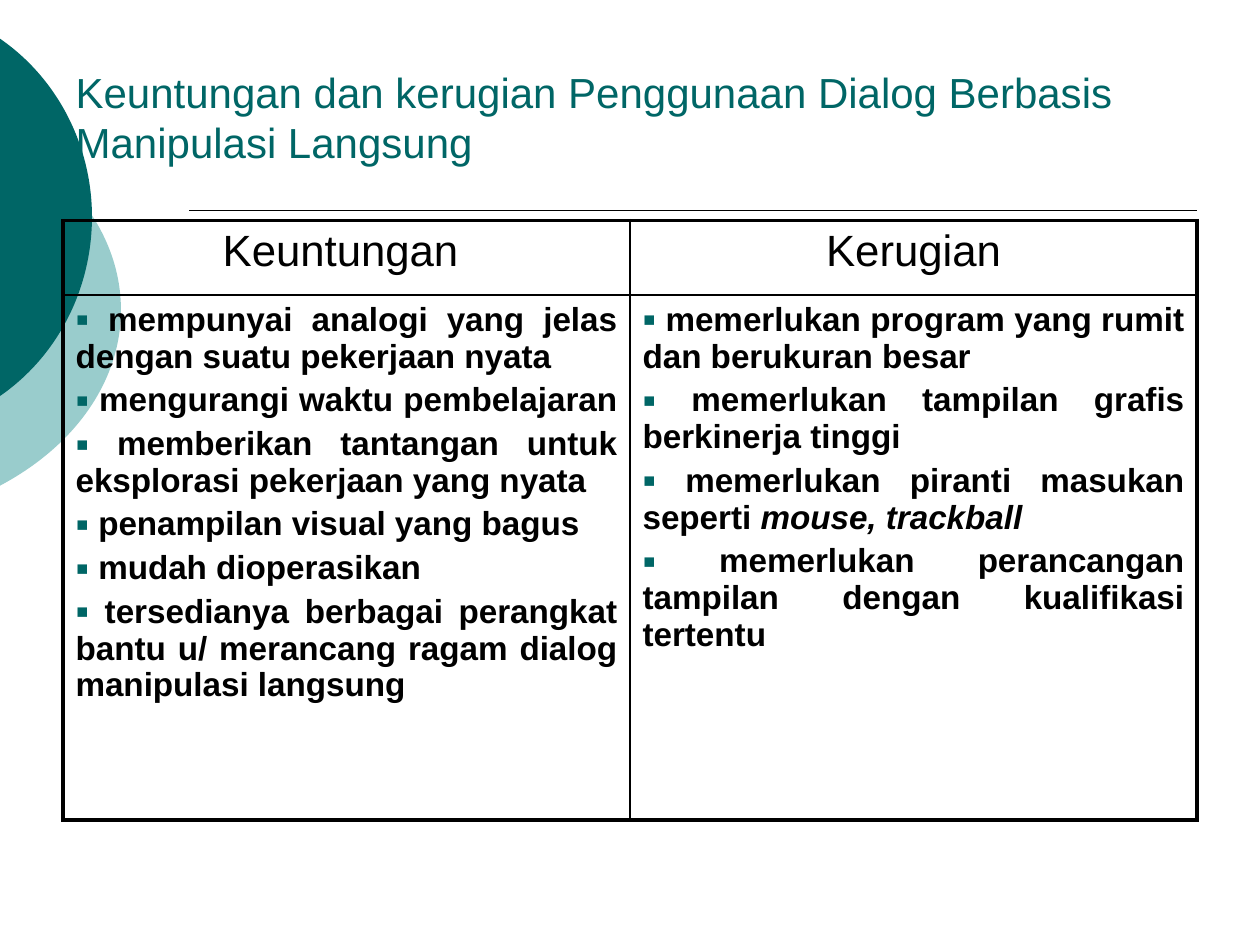
from dataclasses import dataclass

from lxml.etree import SubElement
from pptx import Presentation
from pptx.dml.color import RGBColor
from pptx.enum.shapes import MSO_CONNECTOR
from pptx.enum.text import MSO_ANCHOR, PP_ALIGN
from pptx.oxml import parse_xml
from pptx.oxml.ns import nsdecls, qn
from pptx.util import Inches, Pt


@dataclass(frozen=True)
class Theme:
    font: str = "Arial"
    teal: str = "006666"
    pale: str = "99CCCC"
    ink: str = "000000"
    title: float = 24
    head: float = 25
    body: float = 19
    thick: float = 2.25
    thin: float = 1


T = Theme()
TITLE = "Keuntungan dan kerugian Penggunaan Dialog Berbasis Manipulasi Langsung"
HEADS = ["Keuntungan ", "Kerugian"]
# Each item is a list of (text, italic) runs.
LISTS = [
    [
        [(" mempunyai analogi yang jelas dengan suatu pekerjaan nyata", False)],
        [(" mengurangi waktu pembelajaran ", False)],
        [(" memberikan tantangan untuk eksplorasi pekerjaan yang nyata", False)],
        [(" penampilan visual yang bagus", False)],
        [(" mudah dioperasikan", False)],
        [(" tersedianya berbagai perangkat bantu u/ merancang ragam dialog "
          "manipulasi langsung", False)],
    ],
    [
        [(" memerlukan program yang rumit dan berukuran besar", False)],
        [(" memerlukan tampilan grafis berkinerja tinggi", False)],
        [(" memerlukan piranti masukan seperti ", False), ("mouse, trackball", True)],
        [(" memerlukan perancangan tampilan dengan kualifikasi tertentu", False)],
    ],
]


def add_text(p, runs, size, color=T.ink, align=PP_ALIGN.LEFT, bold=False,
             before=0, bullet=None):
    p.alignment = align
    p.line_spacing = 1.0
    p.space_before = Pt(before)
    for text, italic in runs:
        r = p.add_run()
        r.text = text
        r.font.name, r.font.size = T.font, Pt(size)
        r.font.bold, r.font.italic = bold, italic
        r.font.color.rgb = RGBColor.from_string(color)
    if bullet:
        pPr = p._p.get_or_add_pPr()
        pPr.set("marL", "0")
        pPr.set("indent", "0")
        SubElement(SubElement(pPr, qn("a:buClr")), qn("a:srgbClr"), val=T.teal)
        SubElement(pPr, qn("a:buSzPct"), val="115000")
        SubElement(pPr, qn("a:buFont"), typeface=T.font)
        SubElement(pPr, qn("a:buChar"), char=bullet)


def add_arc(shapes, color, frame, points):
    """Closed outline of cubic curves: a start point, then three points a curve."""
    left, top, width, height = frame
    fb = shapes.build_freeform(Inches(left), Inches(top), scale=1.0)
    fb.add_line_segments([(Inches(left + width), Inches(top + height))])
    arc = fb.convert_to_shape()
    outline = next(arc.element.iter(qn("a:path")))
    for child in list(outline):
        outline.remove(child)
    outline.set("w", str(Inches(width)))
    outline.set("h", str(Inches(height)))
    steps = [("a:moveTo", points[:1])]
    steps += [("a:cubicBezTo", points[i:i + 3]) for i in range(1, len(points), 3)]
    for tag, pts in steps:
        step = SubElement(outline, qn(tag))
        for x, y in pts:
            SubElement(step, qn("a:pt"), x=str(Inches(x - left)),
                       y=str(Inches(y - top)))
    SubElement(outline, qn("a:close"))
    arc.shadow.inherit = False
    arc.fill.solid()
    arc.fill.fore_color.rgb = RGBColor.from_string(color)
    arc.line.fill.background()


prs = Presentation()
prs.slide_width, prs.slide_height = Inches(10), Inches(7.5)
s = prs.slides.add_slide(prs.slide_layouts[5])

add_arc(s.shapes, T.pale, (-3.54, 0.75, 4.5, 3.42),
        [(-0.01, 1.06), (0.6, 1.38), (0.96, 1.9), (0.96, 2.46),
         (0.96, 3.02), (0.6, 3.54), (-0.01, 3.86)])
add_arc(s.shapes, T.teal, (-2.65, 0, 3.38, 3.45),
        [(-0.01, 0.3), (0.46, 0.62), (0.73, 1.16), (0.73, 1.72),
         (0.73, 2.29), (0.46, 2.83), (-0.01, 3.15)])

rule = s.shapes.add_connector(MSO_CONNECTOR.STRAIGHT, Inches(1.5), Inches(1.67),
                              Inches(9.5), Inches(1.67))
rule.line.color.rgb = RGBColor.from_string(T.ink)
rule.line.width = Pt(T.thin)
SubElement(rule.element.spPr, qn("a:effectLst"))

title = s.shapes.title
rule.element.addnext(title.element)
title.left, title.top = Inches(0.5), Inches(0.3)
title.width, title.height = Inches(9), Inches(1.25)
tf = title.text_frame
tf.word_wrap = True
tf.vertical_anchor = MSO_ANCHOR.MIDDLE
add_text(tf.paragraphs[0], [(TITLE, False)], T.title, T.teal)

rows, cols = [0.59, 4.17], [4.5, 4.5]
tbl = s.shapes.add_table(len(rows), len(cols), Inches(0.5), Inches(1.75),
                         Inches(sum(cols)), Inches(sum(rows))).table
tbl.first_row = tbl.horz_banding = False
for row, height in zip(tbl.rows, rows):
    row.height = Inches(height)
for col, width in zip(tbl.columns, cols):
    col.width = Inches(width)

for i in range(len(rows)):
    for j in range(len(cols)):
        cell = tbl.cell(i, j)
        tcPr = cell._tc.get_or_add_tcPr()
        outer = {"L": j == 0, "R": j == len(cols) - 1,
                 "T": i == 0, "B": i == len(rows) - 1}
        for side, is_outer in outer.items():
            width = Pt(T.thick if is_outer else T.thin)
            tcPr.append(parse_xml(
                f'<a:ln{side} {nsdecls("a")} w="{width}"><a:solidFill>'
                f'<a:srgbClr val="{T.ink}"/></a:solidFill></a:ln{side}>'))
        cell.fill.background()
        tf = cell.text_frame
        if i == 0:
            add_text(tf.paragraphs[0], [(HEADS[j], False)], T.head,
                     align=PP_ALIGN.CENTER, before=0.2 * T.head)
            continue
        for k, runs in enumerate(LISTS[j]):
            p = tf.add_paragraph() if k else tf.paragraphs[0]
            add_text(p, runs, T.body, align=PP_ALIGN.JUSTIFY, bold=True,
                     before=0.2 * T.body, bullet="▪")

prs.save("out.pptx")
